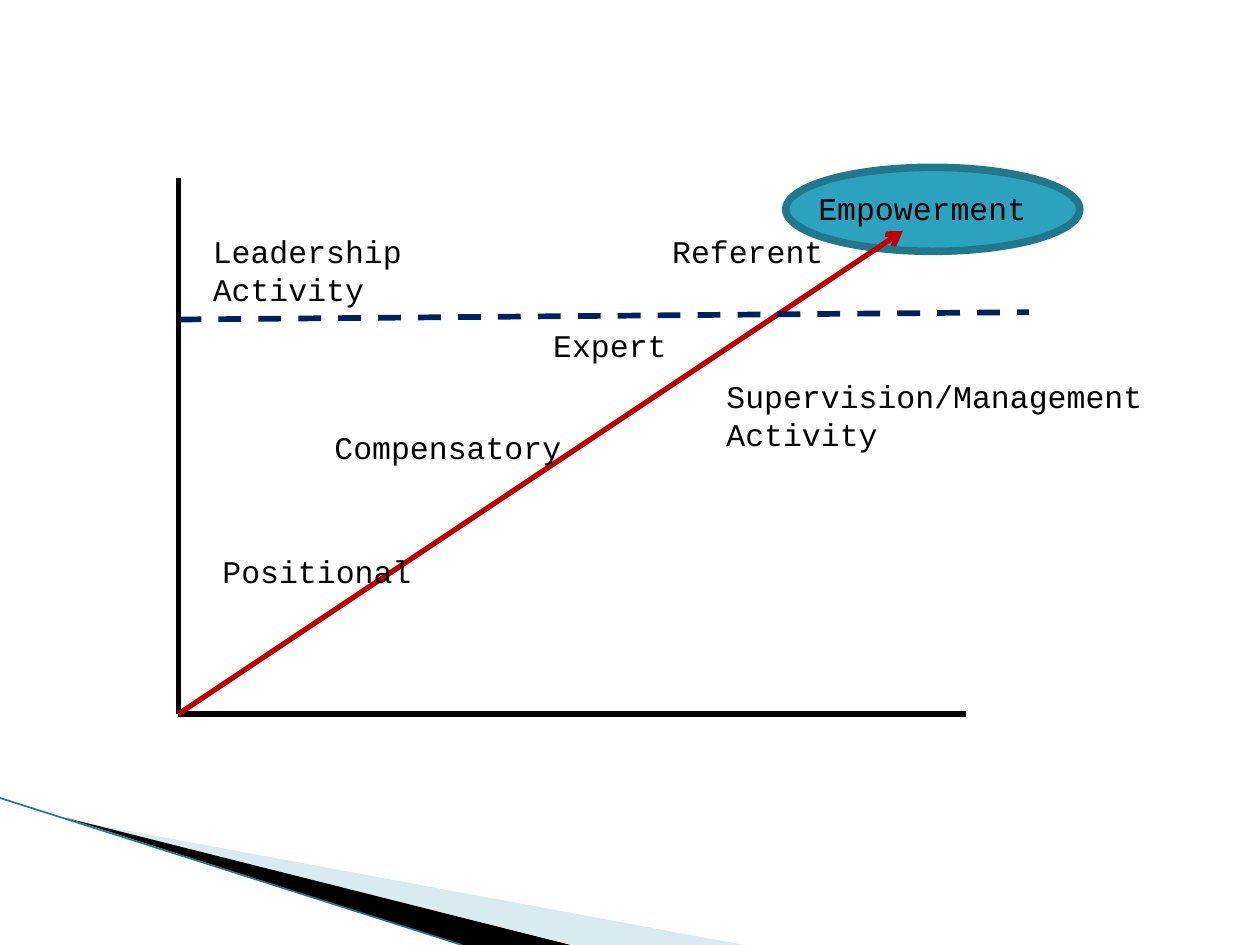
"""Build a slide that plots power bases rising from supervision to leadership."""
import lxml.etree
import pptx
import pptx.dml.color
import pptx.enum.dml
import pptx.enum.shapes
import pptx.enum.text
import pptx.oxml.ns
import pptx.util

Pt = pptx.util.Pt
RGBColor = pptx.dml.color.RGBColor
qn = pptx.oxml.ns.qn

BLACK = RGBColor(0x00, 0x00, 0x00)
PALE_BLUE = RGBColor(0xD9, 0xEA, 0xF1)
TEAL = RGBColor(0x2D, 0xA2, 0xBF)
DARK_TEAL = RGBColor(0x21, 0x78, 0x8D)
RED = RGBColor(0xC0, 0x00, 0x00)
NAVY = RGBColor(0x00, 0x20, 0x60)


def write_text(frame, text, *, font, size, color):
    frame.word_wrap = True
    frame.auto_size = pptx.enum.text.MSO_AUTO_SIZE.SHAPE_TO_FIT_TEXT
    run = frame.paragraphs[0].add_run()
    run.text = text
    run.font.name = font
    run.font.size = Pt(size)
    run.font.color.rgb = color


class SlideBuilder:
    font = "Courier New"
    text_size = 18
    text_color = BLACK

    def __init__(self, slide):
        self.shapes = slide.shapes

    def polygon(self, points, color):
        corners = [(Pt(x), Pt(y)) for x, y in points]
        builder = self.shapes.build_freeform(*corners[0])
        builder.add_line_segments(corners[1:])
        shape = builder.convert_to_shape()
        shape.shadow.inherit = False
        shape.fill.solid()
        shape.fill.fore_color.rgb = color
        shape.line.fill.background()

    def ellipse(self, left, top, width, height, fill, outline, weight):
        shape = self.shapes.add_shape(
            pptx.enum.shapes.MSO_SHAPE.OVAL, Pt(left), Pt(top), Pt(width), Pt(height))
        shape.shadow.inherit = False
        shape.fill.solid()
        shape.fill.fore_color.rgb = fill
        shape.line.color.rgb = outline
        shape.line.width = Pt(weight)

    def line(self, start, end, color, weight=3, dash=None, arrow=False):
        connector = self.shapes.add_connector(
            pptx.enum.shapes.MSO_CONNECTOR.STRAIGHT, *map(Pt, start + end))
        connector.line.color.rgb = color
        connector.line.width = Pt(weight)
        if dash:
            connector.line.dash_style = dash
        properties = connector.element.spPr
        if arrow:
            lxml.etree.SubElement(properties.find(qn("a:ln")), qn("a:tailEnd"), type="arrow")
        lxml.etree.SubElement(properties, qn("a:effectLst"))

    def label(self, text, left, top, width, height=29):
        box = self.shapes.add_textbox(Pt(left), Pt(top), Pt(width), Pt(height))
        write_text(box.text_frame, text, font=self.font, size=self.text_size,
                   color=self.text_color)


def main():
    presentation = pptx.Presentation()
    presentation.slide_width, presentation.slide_height = Pt(720), Pt(540)
    builder = SlideBuilder(presentation.slides.add_slide(presentation.slide_layouts[6]))

    builder.polygon([(39.6, 468.5), (425, 540), (328, 540)], PALE_BLUE)
    builder.polygon([(38.2, 467.5), (326, 540), (264, 540)], BLACK)
    builder.line((0, 456), (264, 540), DARK_TEAL, weight=0.95)

    origin = (102, 408)
    builder.ellipse(449, 95.6, 168, 48, TEAL, DARK_TEAL, 4.33)
    builder.line((102, 102), origin, BLACK)
    builder.line(origin, (552, 408), BLACK)
    builder.line(origin, (516, 132), RED, arrow=True)

    for label in (
        ("Leadership Activity", 114.5, 129, 192),
        ("Supervision/Management Activity", 408, 212, 312),
        ("Positional", 120, 312, 132),
        ("Expert", 309, 183, 168),
        ("Compensatory", 184, 241, 204),
        ("Referent", 377, 129, 144),
    ):
        builder.label(*label)

    builder.line((102, 182.6), (588, 178.4), NAVY, weight=3.25,
                 dash=pptx.enum.dml.MSO_LINE.DASH)
    builder.label("Empowerment", 460.5, 104.2, 207)
    presentation.save("out.pptx")


if __name__ == "__main__":
    main()
